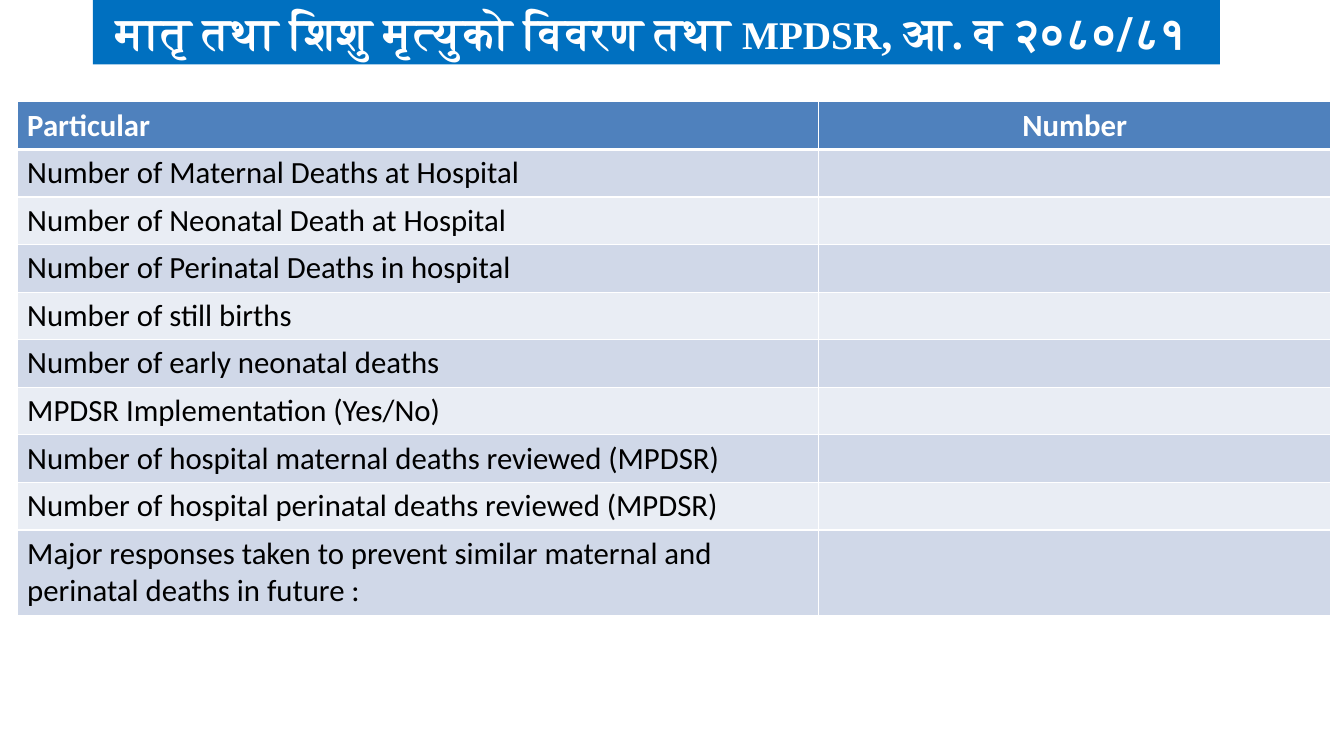
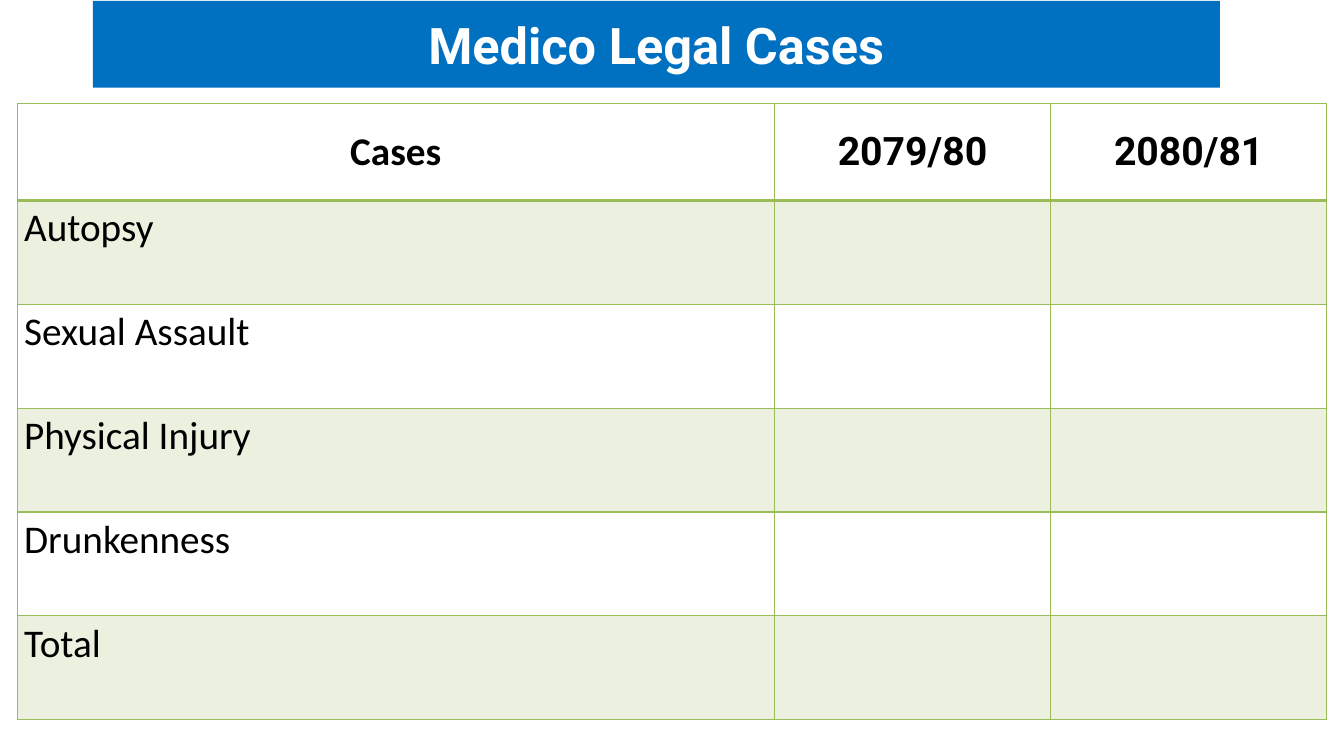
from dataclasses import dataclass

import pptx
import pptx.dml.color
import pptx.enum.text
import pptx.oxml
import pptx.oxml.ns
import pptx.util
from pptx.util import Inches

ALIGN = pptx.enum.text.PP_ALIGN
ANCHOR = pptx.enum.text.MSO_ANCHOR


@dataclass(frozen=True)
class Theme:
    band: str = "0070C0"
    white: str = "FFFFFF"
    black: str = "000000"
    blue: str = "4F81BD"
    blue_bands: tuple = ("D0D8E8", "E9EDF4")
    green: str = "9BBB59"
    green_bands: tuple = ("EBF1DE", None)
    body: str = "Calibri"
    heading: str = "Roboto"
    serif: str = "Times New Roman"
    title_size: int = 36
    nepali_size: int = 32
    acronym_size: int = 28
    deaths_size: int = 22
    cases_size: int = 28


theme = Theme()


def add_run(paragraph, text, font, size, color, bold):
    run = paragraph.add_run()
    run.text = text
    run.font.name = font
    run.font.size = pptx.util.Pt(size)
    run.font.bold = bold
    run.font.color.rgb = pptx.dml.color.RGBColor.from_string(color)
    # Devanagari takes its face from the complex-script font
    complex_script = run.font._element.makeelement(pptx.oxml.ns.qn("a:cs"), {"typeface": font})
    run.font._element.append(complex_script)


def add_border(cell, side, color, width):
    cell._tc.get_or_add_tcPr().append(pptx.oxml.parse_xml(
        f'<a:ln{side} {pptx.oxml.ns.nsdecls("a")} w="{pptx.util.Pt(width)}">'
        f'<a:solidFill><a:srgbClr val="{color}"/></a:solidFill></a:ln{side}>'))


# Content of the two slides
death_rows = [
    "Number of Maternal Deaths at Hospital",
    "Number of Neonatal Death at Hospital",
    "Number of Perinatal Deaths in hospital",
    "Number of still births",
    "Number of early neonatal deaths",
    "MPDSR Implementation (Yes/No)",
    "Number of hospital maternal deaths reviewed (MPDSR)",
    "Number of hospital perinatal deaths reviewed (MPDSR)",
    "Major responses taken to prevent similar maternal and perinatal deaths in future :",
]
case_rows = ["Autopsy", "Sexual Assault", "Physical Injury", "Drunkenness", "Total"]

pages = [
    dict(
        title=[("मातृ तथा शिशु मृत्युको विवरण तथा ", theme.serif, theme.nepali_size),
               ("MPDSR", theme.serif, theme.acronym_size),
               (", आ. व ", theme.serif, theme.nepali_size),
               ("२०८०/८१ ", theme.heading, theme.nepali_size)],
        title_top=-0.02, title_height=0.66, table_top=1.01,
        columns=[7.95, 5.08], heights=[0.47] * 9 + [0.85],
        header=[("Particular", theme.body, ALIGN.LEFT), ("Number", theme.body, ALIGN.CENTER)],
        labels=death_rows, size=theme.deaths_size,
        header_fill=theme.blue, header_color=theme.white, bands=theme.blue_bands,
        border=theme.white, header_rule=3, margins=(0.1, 0.05), header_anchor=ANCHOR.TOP,
    ),
    dict(
        title=[("Medico Legal Cases", theme.heading, theme.title_size)],
        title_top=0.01, title_height=0.86, table_top=1.03,
        columns=[7.51, 2.74, 2.74], heights=[0.96] + [1.03] * 5,
        header=[("Cases", theme.body, ALIGN.CENTER), ("2079/80", theme.heading, ALIGN.CENTER),
                ("2080/81", theme.heading, ALIGN.CENTER)],
        labels=case_rows, size=theme.cases_size,
        header_fill=None, header_color=theme.black, bands=theme.green_bands,
        border=theme.green, header_rule=2, margins=(0.07, 0.04), header_anchor=ANCHOR.MIDDLE,
    ),
]

deck = pptx.Presentation()
deck.slide_width, deck.slide_height = Inches(13.33), Inches(7.5)

for page in pages:
    slide = deck.slides.add_slide(deck.slide_layouts[5])

    # Title band
    title = slide.shapes.title
    title.left, title.top = Inches(0.92), Inches(page["title_top"])
    title.width, title.height = Inches(11.18), Inches(page["title_height"])
    title.fill.solid()
    title.fill.fore_color.rgb = pptx.dml.color.RGBColor.from_string(theme.band)
    title.text_frame.auto_size = pptx.enum.text.MSO_AUTO_SIZE.NONE
    title.text_frame.vertical_anchor = ANCHOR.MIDDLE
    heading = title.text_frame.paragraphs[0]
    heading.alignment = ALIGN.CENTER
    for text, font, size in page["title"]:
        add_run(heading, text, font, size, theme.white, True)

    # Table grid
    columns, heights = page["columns"], page["heights"]
    table = slide.shapes.add_table(
        len(heights), len(columns), Inches(0.17), Inches(page["table_top"]),
        Inches(sum(columns)), Inches(sum(heights))).table
    table.horz_banding = False
    for column, width in zip(table.columns, columns):
        column.width = Inches(width)
    for row, height in zip(table.rows, heights):
        row.height = Inches(height)

    # Cell borders, fills and margins
    for r, row in enumerate(table.rows):
        fill = page["bands"][(r - 1) % 2] if r else page["header_fill"]
        top = page["header_rule"] if r == 1 else 1
        bottom = page["header_rule"] if r == 0 else 1
        for cell in row.cells:
            for side, width in (("L", 1), ("R", 1), ("T", top), ("B", bottom)):
                add_border(cell, side, page["border"], width)
            if fill:
                cell.fill.solid()
                cell.fill.fore_color.rgb = pptx.dml.color.RGBColor.from_string(fill)
            else:
                cell.fill.background()
            side_margin, end_margin = page["margins"]
            cell.margin_left = cell.margin_right = Inches(side_margin)
            cell.margin_top = cell.margin_bottom = Inches(end_margin)

    # Header and row labels
    for c, (text, font, alignment) in enumerate(page["header"]):
        cell = table.cell(0, c)
        cell.vertical_anchor = page["header_anchor"]
        paragraph = cell.text_frame.paragraphs[0]
        paragraph.alignment = alignment
        add_run(paragraph, text, font, page["size"], page["header_color"], True)
    for r, label in enumerate(page["labels"], start=1):
        paragraph = table.cell(r, 0).text_frame.paragraphs[0]
        add_run(paragraph, label, theme.body, page["size"], theme.black, False)

deck.save("out.pptx")
